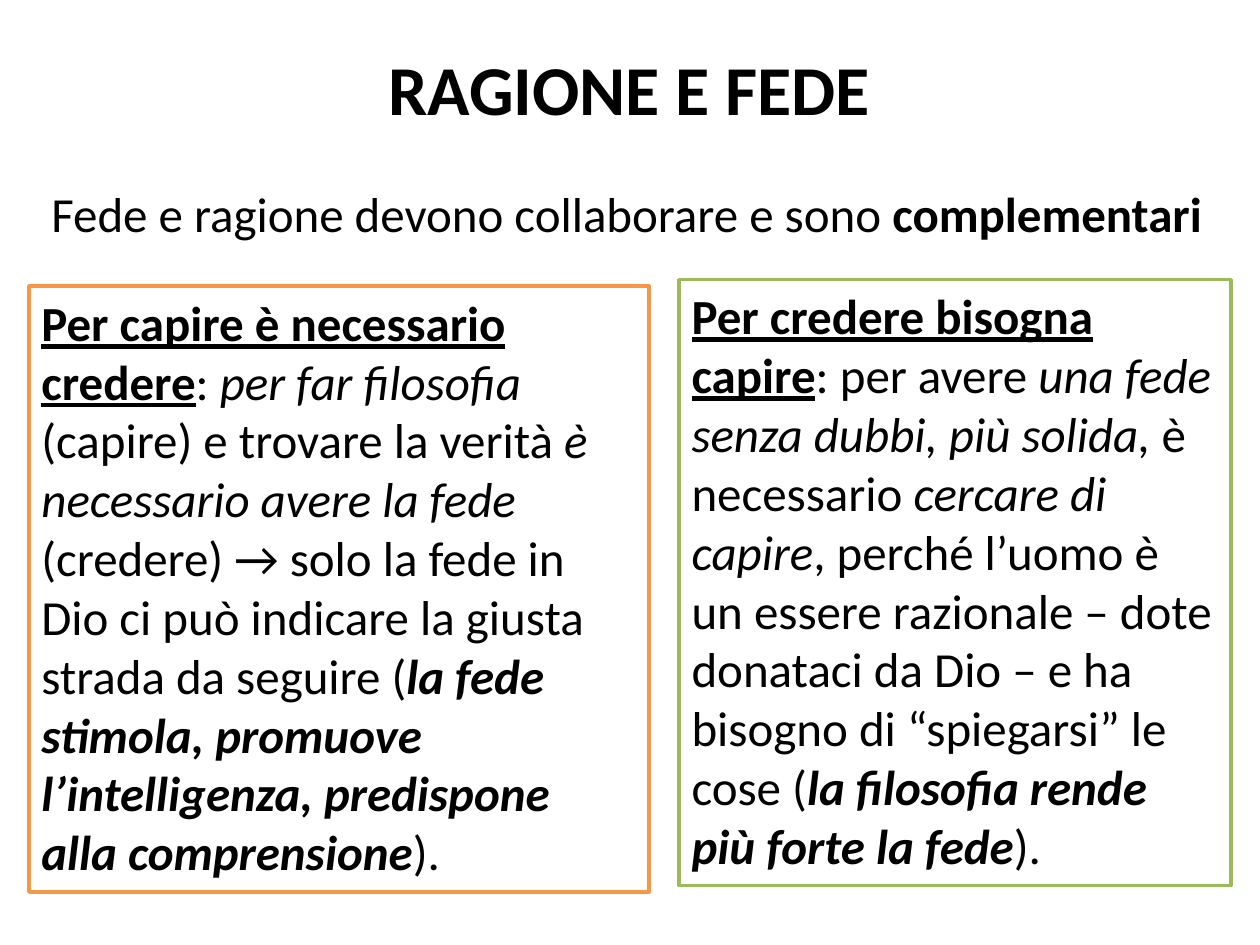
from dataclasses import dataclass

from pptx import Presentation
from pptx.dml.color import RGBColor
from pptx.enum import shapes, text
from pptx.util import Inches, Pt

COLORS = {"ink": "000000", "paper": "FFFFFF", "orange": "F79646", "green": "9BBB59"}
FONT = "Calibri"
BODY_SIZE = 28
PLAIN = {}
BOLD = {"bold": True}
ITALIC = {"italic": True}
HEADING = {"bold": True, "underline": True}
EMPHASIS = {"bold": True, "italic": True}


@dataclass
class Span:
    words: str
    style: dict


@dataclass
class Panel:
    left: float
    top: float
    width: float
    height: float
    outline: str
    spans: list[Span]


PANELS = [
    Panel(0.23, 2.27, 4.92, 4.81, "orange", [
        Span("Per capire è necessario credere", HEADING),
        Span(": ", PLAIN),
        Span("per far filosofia", ITALIC),
        Span(" (capire) e trovare la verità ", PLAIN),
        Span("è necessario avere la fede", ITALIC),
        Span(" (credere) → solo la fede in Dio ci può indicare la giusta "
             "strada da seguire (", PLAIN),
        Span("la fede stimola, promuove l’intelligenza, predispone alla "
             "comprensione", EMPHASIS),
        Span(").", PLAIN),
    ]),
    Panel(5.39, 2.22, 4.38, 4.81, "green", [
        Span("Per credere bisogna capire", HEADING),
        Span(": per avere ", PLAIN),
        Span("una fede senza dubbi, più solida,", ITALIC),
        Span(" è necessario ", PLAIN),
        Span("cercare di capire", ITALIC),
        Span(", perché l’uomo è un essere razionale – dote donataci da Dio – "
             "e ha bisogno di “spiegarsi” le cose (", PLAIN),
        Span("la filosofia rende più forte la fede", EMPHASIS),
        Span(").", PLAIN),
    ]),
]


def color(name: str) -> RGBColor:
    return RGBColor.from_string(COLORS[name])


def write(box, spans: list[Span], size: int = BODY_SIZE,
          align=text.PP_ALIGN.LEFT) -> None:
    frame = box.text_frame
    frame.word_wrap = True
    frame.auto_size = text.MSO_AUTO_SIZE.NONE
    frame.vertical_anchor = text.MSO_ANCHOR.TOP
    para = frame.paragraphs[0]
    para.alignment = align
    for span in spans:
        run = para.add_run()
        run.text = span.words
        run.font.color.rgb = color("ink")
        for name, value in {"name": FONT, "size": Pt(size), **span.style}.items():
            setattr(run.font, name, value)


def add_title(page, words: str) -> None:
    title = page.shapes.title
    title.left, title.top = Inches(1.95), Inches(0.31)
    title.width, title.height = Inches(6.09), Inches(0.77)
    write(title, [Span(words, BOLD)], 40, text.PP_ALIGN.CENTER)


def add_panel(page, panel: Panel) -> None:
    box = page.shapes.add_shape(
        shapes.MSO_SHAPE.RECTANGLE, Inches(panel.left), Inches(panel.top),
        Inches(panel.width), Inches(panel.height))
    box.shadow.inherit = False
    box.fill.solid()
    box.fill.fore_color.rgb = color("paper")
    box.line.color.rgb = color(panel.outline)
    box.line.width = Pt(2)
    write(box, panel.spans)


def main() -> None:
    deck = Presentation()
    deck.slide_width, deck.slide_height = Inches(10), Inches(7.5)
    page = deck.slides.add_slide(deck.slide_layouts[5])
    add_title(page, "RAGIONE E FEDE")
    intro = page.shapes.add_textbox(
        Inches(0.31), Inches(1.41), Inches(9.45), Inches(1.51))
    write(intro, [Span("Fede e ragione devono collaborare e sono ", PLAIN),
                  Span("complementari", BOLD)])
    for panel in PANELS:
        add_panel(page, panel)
    deck.save("out.pptx")


if __name__ == "__main__":
    main()
